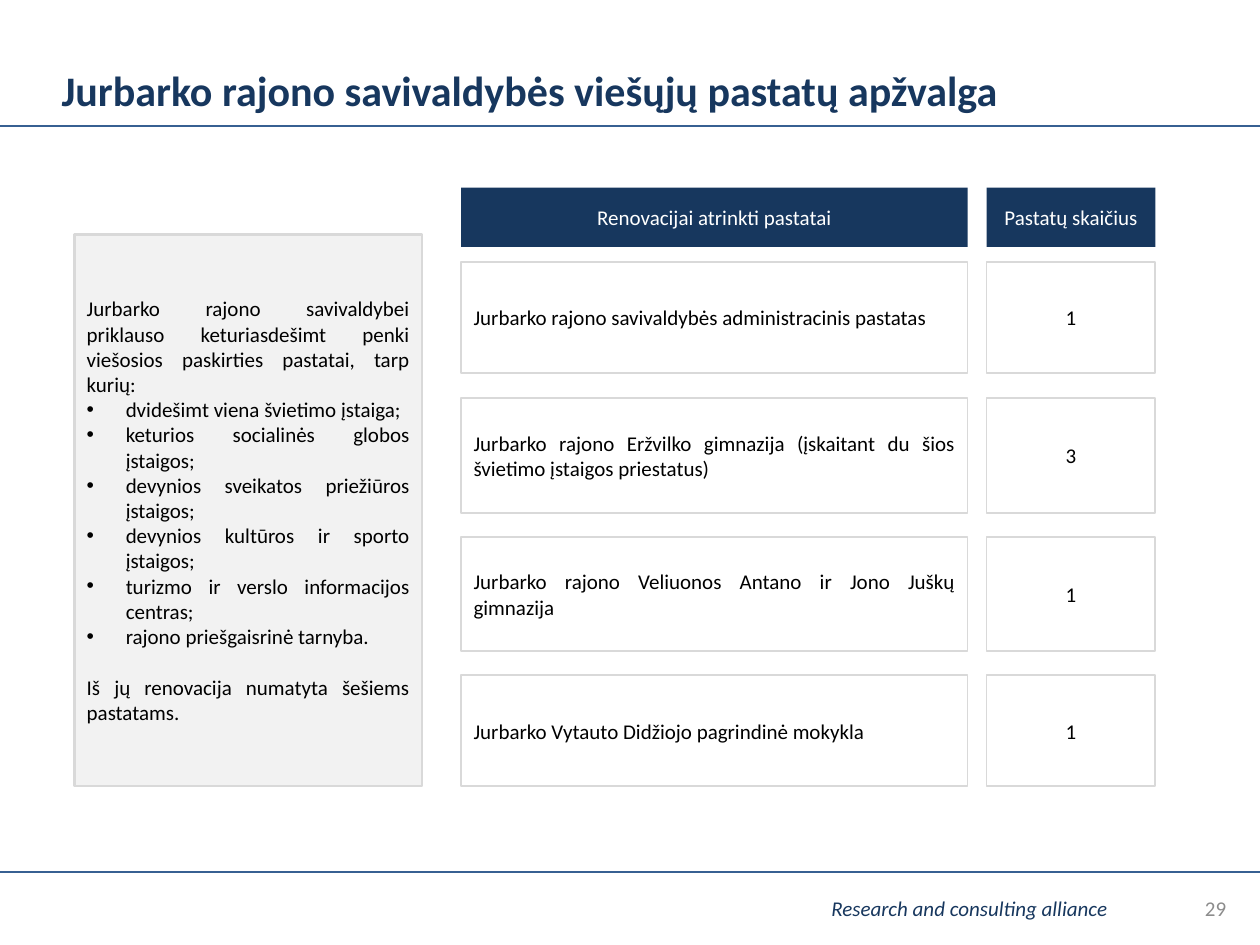
from lxml import etree
from pptx import Presentation
from pptx import util as u
from pptx.dml.color import RGBColor
from pptx.enum import shapes, text
from pptx.oxml.ns import qn

NAVY = RGBColor(0x17, 0x37, 0x5E)
RULE_BLUE = RGBColor(0x37, 0x60, 0x92)
PALE_GREY = RGBColor(0xF2, 0xF2, 0xF2)
BORDER_GREY = RGBColor(0xD9, 0xD9, 0xD9)
NUMBER_GREY = RGBColor(0x8C, 0x8C, 0x8C)
BLACK = RGBColor(0, 0, 0)
WHITE = RGBColor(0xFF, 0xFF, 0xFF)

LEFT, CENTER = text.PP_ALIGN.LEFT, text.PP_ALIGN.CENTER
RIGHT, JUSTIFY = text.PP_ALIGN.RIGHT, text.PP_ALIGN.JUSTIFY

INTRO = ("Jurbarko rajono savivaldybei priklauso keturiasdešimt penki "
         "viešosios paskirties pastatai, tarp kurių:")
INSTITUTIONS = [
    "dvidešimt viena švietimo įstaiga;",
    "keturios socialinės globos įstaigos;",
    "devynios sveikatos priežiūros įstaigos;",
    "devynios kultūros ir sporto įstaigos;",
    "turizmo ir verslo informacijos centras;",
    "rajono priešgaisrinė tarnyba.",
]
CONCLUSION = "Iš jų renovacija numatyta šešiems pastatams."

# (top, height, building, number of buildings)
BUILDING_ROWS = [
    (2.08, 0.88, "Jurbarko rajono savivaldybės administracinis pastatas", "1"),
    (3.16, 0.91, "Jurbarko rajono Eržvilko gimnazija (įskaitant du šios "
                 "švietimo įstaigos priestatus)", "3"),
    (4.26, 0.91, "Jurbarko rajono Veliuonos Antano ir Jono Juškų gimnazija", "1"),
    (5.36, 0.88, "Jurbarko Vytauto Didžiojo pagrindinė mokykla", "1"),
]
# (left, width)
BUILDING_COLUMN = (3.66, 4.02)
COUNT_COLUMN = (7.83, 1.34)


def write(para, content, size=12, color=BLACK, bold=False, italic=False,
          align=LEFT, bullet=False, space_before=0):
    para.alignment = align
    if space_before:
        para.space_before = u.Pt(space_before)
    if bullet:
        properties = para._p.get_or_add_pPr()
        properties.set("marL", str(u.Inches(0.31)))
        properties.set("indent", str(-u.Inches(0.31)))
        etree.SubElement(properties, qn("a:buFont")).set("typeface", "Arial")
        etree.SubElement(properties, qn("a:buChar")).set("char", "•")
    span = para.add_run()
    span.text = content
    font = span.font
    font.name, font.size, font.bold, font.italic = "Calibri", u.Pt(size), bold, italic
    font.color.rgb = color


class SlideBuilder:
    """Holds the page and the look shared by its elements."""

    def __init__(self, page):
        self.page = page

    def prepare(self, box):
        box.text_frame.word_wrap = True
        box.text_frame.vertical_anchor = text.MSO_ANCHOR.MIDDLE
        return box.text_frame

    def label(self, left, top, width, height, content, **style):
        box = self.page.shapes.add_textbox(*map(u.Inches, (left, top, width, height)))
        write(self.prepare(box).paragraphs[0], content, **style)

    def panel(self, left, top, width, height, paragraphs, fill=WHITE,
              border=BORDER_GREY, border_width=1):
        """Add a rectangle; paragraphs is a list of (content, style) pairs."""
        box = self.page.shapes.add_shape(
            shapes.MSO_SHAPE.RECTANGLE, *map(u.Inches, (left, top, width, height)))
        box.shadow.inherit = False
        box.fill.solid()
        box.fill.fore_color.rgb = fill
        if border is None:
            box.line.fill.background()
        else:
            box.line.color.rgb = border
            box.line.width = u.Pt(border_width)
        frame = self.prepare(box)
        for index, (content, style) in enumerate(paragraphs):
            para = frame.add_paragraph() if index else frame.paragraphs[0]
            write(para, content, **style)

    def rule(self, top):
        """Draw a horizontal line across the full page."""
        line = self.page.shapes.add_connector(
            shapes.MSO_CONNECTOR.STRAIGHT, 0, u.Inches(top), u.Inches(10), u.Inches(top))
        line.line.color.rgb = RULE_BLUE
        line.line.width = u.Pt(1)
        etree.SubElement(line._element.spPr, qn("a:effectLst"))


def main():
    deck = Presentation()
    deck.slide_width, deck.slide_height = u.Inches(10), u.Inches(7.5)
    builder = SlideBuilder(deck.slides.add_slide(deck.slide_layouts[6]))

    for top in (1, 6.92):
        builder.rule(top)
    builder.label(6.5, 7.06, 3.46, 0.29, "Research and consulting alliance",
                  color=NAVY, italic=True)
    builder.label(7.5, 7.01, 2.33, 0.4, "29", color=NUMBER_GREY, align=RIGHT)
    builder.label(0.39, 0.45, 9, 0.53,
                  "Jurbarko rajono savivaldybės viešųjų pastatų apžvalga",
                  size=24, color=NAVY, bold=True)

    justified = {"align": JUSTIFY}
    overview = [(INTRO, justified)]
    overview += [(item, {"align": JUSTIFY, "bullet": True}) for item in INSTITUTIONS]
    overview.append((CONCLUSION, {"align": JUSTIFY, "space_before": 14.6}))
    builder.panel(0.59, 1.86, 2.76, 4.38, overview, fill=PALE_GREY, border_width=1.5)

    for (left, width), heading in ((BUILDING_COLUMN, "Renovacijai atrinkti pastatai"),
                                   (COUNT_COLUMN, "Pastatų skaičius")):
        builder.panel(left, 1.49, width, 0.47,
                      [(heading, {"color": WHITE, "align": CENTER})],
                      fill=NAVY, border=None)
    for top, height, building, count in BUILDING_ROWS:
        for (left, width), content, align in ((BUILDING_COLUMN, building, JUSTIFY),
                                              (COUNT_COLUMN, count, CENTER)):
            builder.panel(left, top, width, height, [(content, {"align": align})])

    deck.save("out.pptx")


if __name__ == "__main__":
    main()
